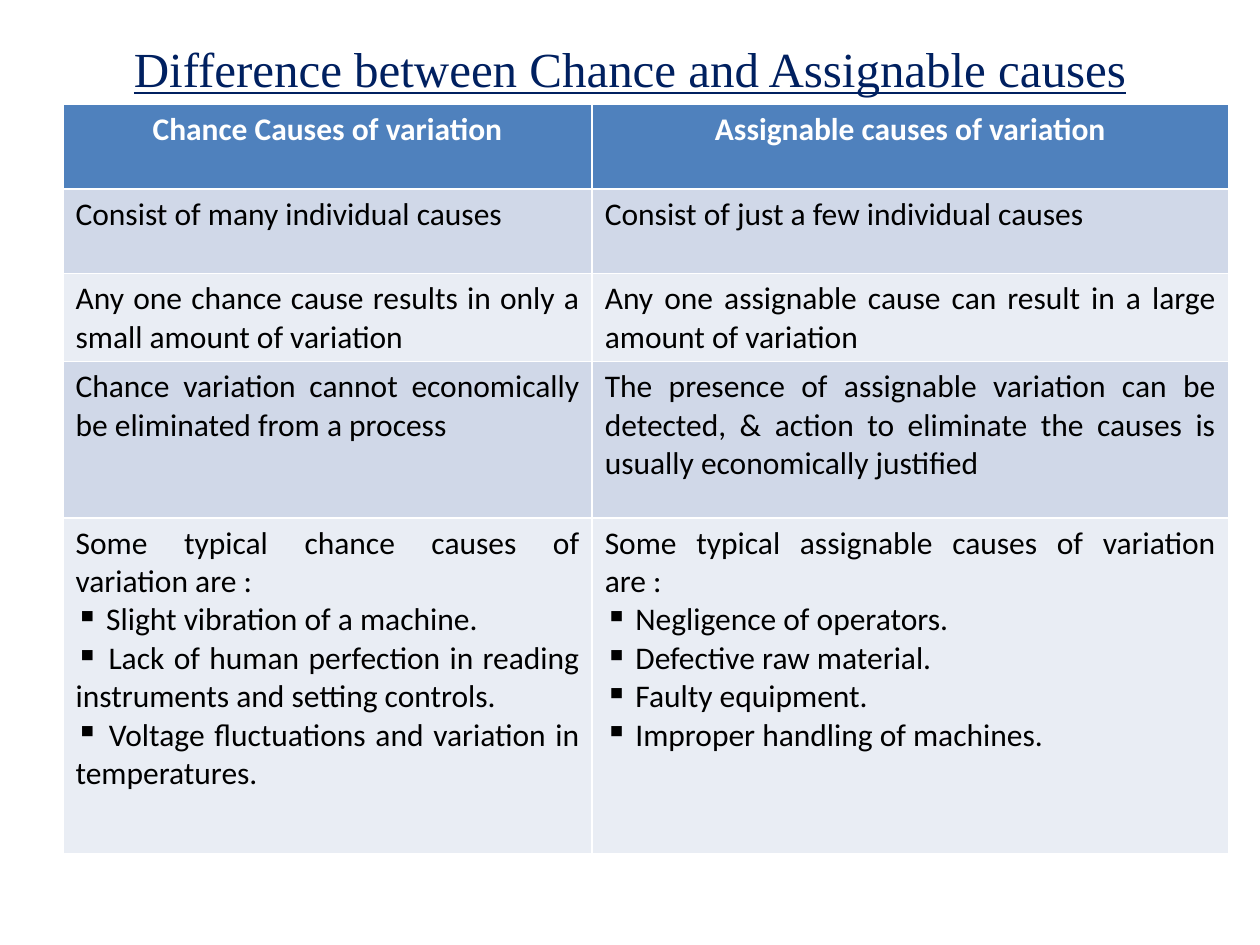
from lxml import etree
from pptx import Presentation
from pptx.dml.color import RGBColor
from pptx.enum.text import MSO_ANCHOR, PP_ALIGN
from pptx.oxml.ns import qn
from pptx.util import Inches, Pt

NAVY = RGBColor(0x00, 0x20, 0x60)
BLUE = RGBColor(0x4F, 0x81, 0xBD)
BAND_DARK = RGBColor(0xD0, 0xD8, 0xE8)
BAND_LIGHT = RGBColor(0xE9, 0xED, 0xF4)
WHITE = RGBColor(0xFF, 0xFF, 0xFF)
BLACK = RGBColor(0x00, 0x00, 0x00)

COL_WIDTHS = [4.2, 5.05]
ROW_HEIGHTS = [0.67, 0.67, 0.67, 1.24, 2.67]
ROWS = [
    (["Chance Causes of variation"], ["Assignable causes of variation"]),
    (["Consist of many individual causes"], ["Consist of just a few individual causes"]),
    (["Any one chance cause results in only a small amount of variation"],
     ["Any one assignable cause can result in a large amount of variation"]),
    (["Chance variation cannot economically be eliminated from a process"],
     ["The presence of assignable variation can be detected, & action to eliminate "
      "the causes is usually economically justified"]),
    (["Some typical chance causes of variation are :",
      " Slight vibration of a machine.",
      " Lack of human perfection in reading instruments and setting controls.",
      " Voltage fluctuations and variation in temperatures."],
     ["Some typical assignable causes of variation are :",
      " Negligence of operators.",
      " Defective raw material.",
      " Faulty equipment.",
      " Improper handling of machines."]),
]


def format_run(p, font, size, color):
    f = p.runs[0].font
    f.name = font
    f.size = Pt(size)
    f.color.rgb = color
    return f


prs = Presentation()
prs.slide_width = Inches(10)
prs.slide_height = Inches(7.5)
s = prs.slides.add_slide(prs.slide_layouts[6])

title = s.shapes.add_textbox(Inches(0.5), Inches(0.25), Inches(9), Inches(0.58))
tf = title.text_frame
tf.word_wrap = True
tf.vertical_anchor = MSO_ANCHOR.MIDDLE
tf.text = "Difference between Chance and Assignable causes"
p = tf.paragraphs[0]
p.alignment = PP_ALIGN.CENTER
format_run(p, "Times New Roman", 28, NAVY).underline = True

table = s.shapes.add_table(
    len(ROWS), len(COL_WIDTHS), Inches(0.5), Inches(0.83),
    Inches(sum(COL_WIDTHS)), Inches(sum(ROW_HEIGHTS))).table
for col, width in zip(table.columns, COL_WIDTHS):
    col.width = Inches(width)
for row, height in zip(table.rows, ROW_HEIGHTS):
    row.height = Inches(height)

for i, row in enumerate(ROWS):
    header = i == 0
    fill = BLUE if header else BAND_DARK if i % 2 else BAND_LIGHT
    for j, lines in enumerate(row):
        cell = table.cell(i, j)
        cell.fill.solid()
        cell.fill.fore_color.rgb = fill
        tf = cell.text_frame
        tf.text = "\n".join(lines)
        for n, p in enumerate(tf.paragraphs):
            p.alignment = PP_ALIGN.CENTER if header else PP_ALIGN.JUSTIFY
            format_run(p, "Calibri", 18, WHITE if header else BLACK).bold = header
            if n:
                pPr = p._p.get_or_add_pPr()
                etree.SubElement(pPr, qn("a:buChar")).set("char", "▪")

prs.save("out.pptx")
